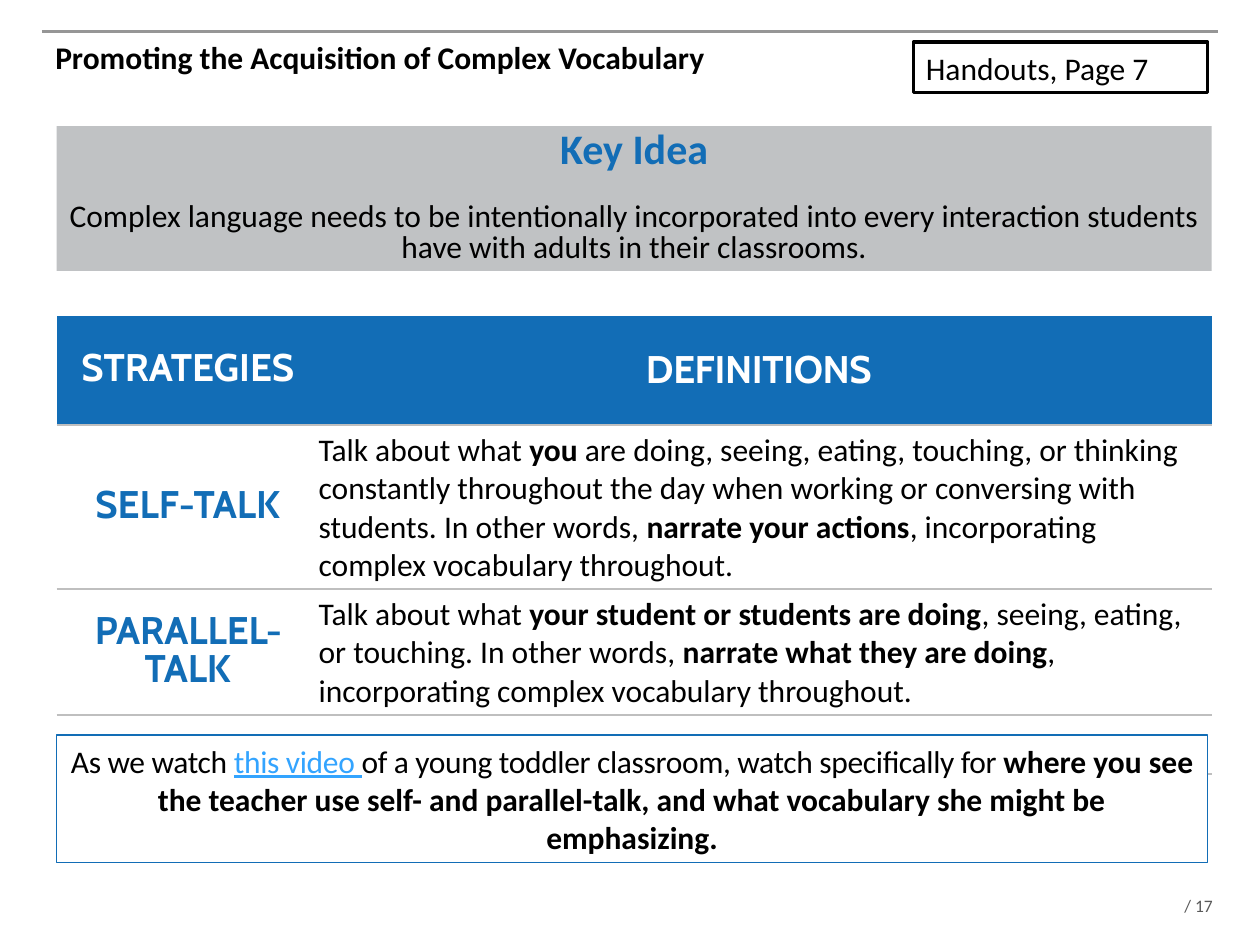
"""Build the slide on self-talk and parallel-talk strategies."""
import pptx
import pptx.dml.color
import pptx.enum.shapes
import pptx.enum.text
import pptx.oxml
import pptx.oxml.ns
import pptx.util

Pt = pptx.util.Pt
ALIGN = pptx.enum.text.PP_ALIGN
ANCHOR = pptx.enum.text.MSO_ANCHOR
BLUE, GREY, BLACK, WHITE, LINK = "126DB6", "BFBFBF", "000000", "FFFFFF", "33A4FF"

TITLE = "Promoting the Acquisition of Complex Vocabulary"
HANDOUT = "Handouts, Page 7"
PAGE = " / 17"
KEY_HEADING = "Key Idea"
KEY_TEXT = ("Complex language needs to be intentionally incorporated into every "
            "interaction students have with adults in their classrooms.")
HEADERS = ["STRATEGIES", "DEFINITIONS"]
STRATEGIES = [
    ("SELF-TALK", [
        ("Talk about what ", {}), ("you", {"bold": True}),
        (" are doing, seeing, eating, touching, or thinking constantly throughout the day "
         "when working or conversing with students. In other words, ", {}),
        ("narrate your actions", {"bold": True}),
        (", incorporating complex vocabulary throughout.", {})]),
    ("PARALLEL-TALK", [
        ("Talk about what ", {}), ("your student or students are doing", {"bold": True}),
        (", seeing, eating, or touching. In other words, ", {}),
        ("narrate what they are doing", {"bold": True}),
        (", incorporating complex vocabulary throughout.", {})]),
]
VIDEO = [
    ("As we watch ", {"tracking": -20}),
    ("this video ", {"tracking": -20, "hue": LINK, "underline": True}),
    ("of a young toddler classroom, watch specifically for ", {"tracking": -20}),
    ("where you see the teacher use self- and parallel-talk, and what vocabulary "
     "she might be emphasizing.", {"bold": True}),
]
COLUMN_WIDTHS = [142.5, 517.5]
ROW_HEIGHTS = [63, 93.6, 72, 33.6]


def color(value):
    return pptx.dml.color.RGBColor.from_string(value)


def write(paragraph, runs, size=18, hue=BLACK, name="Calibri", bold=None,
          align=ALIGN.LEFT, spacing=None):
    paragraph.alignment = align
    if spacing:
        paragraph.line_spacing = spacing
    font = paragraph.font
    font.size, font.name, font.bold = Pt(size), name, bold
    font.color.rgb = color(hue)
    for words, style in [(runs, {})] if isinstance(runs, str) else runs:
        run = paragraph.add_run()
        run.text = words
        if "bold" in style:
            run.font.bold = style["bold"]
        if "underline" in style:
            run.font.underline = style["underline"]
        if "hue" in style:
            run.font.color.rgb = color(style["hue"])
        if "tracking" in style:
            run.font._element.set("spc", str(style["tracking"]))


def add_text(slide, box, runs, inset=True, **style):
    frame = slide.shapes.add_textbox(*map(Pt, box)).text_frame
    frame.word_wrap = True
    if not inset:
        frame.margin_left = frame.margin_right = frame.margin_top = frame.margin_bottom = 0
    write(frame.paragraphs[0], runs, **style)


def add_panel(slide, box, fill, outline=None, weight=0):
    panel = slide.shapes.add_shape(pptx.enum.shapes.MSO_SHAPE.RECTANGLE, *map(Pt, box))
    panel.shadow.inherit = False
    panel.fill.solid()
    panel.fill.fore_color.rgb = color(fill)
    if outline:
        panel.line.color.rgb = color(outline)
        panel.line.width = Pt(weight)
    else:
        panel.line.fill.background()
    panel.text_frame.word_wrap = True
    return panel.text_frame


def set_borders(cell, **edges):
    properties = cell._tc.get_or_add_tcPr()
    for position, side in enumerate("LRTB"):
        hue = edges.get(side)
        paint = f'<a:solidFill><a:srgbClr val="{hue}"/></a:solidFill>' if hue else "<a:noFill/>"
        properties.insert(position, pptx.oxml.parse_xml(
            f'<a:ln{side} {pptx.oxml.ns.nsdecls("a")} w="12700">{paint}</a:ln{side}>'))


def add_strategies(slide):
    table = slide.shapes.add_table(
        len(ROW_HEIGHTS), len(COLUMN_WIDTHS), Pt(32.4), Pt(180),
        Pt(sum(COLUMN_WIDTHS)), Pt(sum(ROW_HEIGHTS))).table
    table.first_row = table.horz_banding = False
    for column, width in zip(table.columns, COLUMN_WIDTHS):
        column.width = Pt(width)
    for row, height in zip(table.rows, ROW_HEIGHTS):
        row.height = Pt(height)
    for r, row in enumerate(table.rows):
        for c, cell in enumerate(row.cells):
            cell.vertical_anchor = ANCHOR.MIDDLE
            if c == 0:
                cell.margin_right = 0
            if r == 0:
                cell.fill.solid()
                cell.fill.fore_color.rgb = color(BLUE)
            else:
                cell.fill.background()
            set_borders(cell, T=GREY if r else WHITE, B=GREY)
    label = dict(size=22, name="Cabin", bold=True, align=ALIGN.CENTER)
    strategies, definitions = (table.cell(0, c).text_frame.paragraphs[0] for c in range(2))
    write(strategies, HEADERS[0], hue=WHITE, spacing=0.8, **label)
    write(definitions, [(HEADERS[1], {"tracking": -20})], hue=WHITE, **label)
    for r, (strategy, definition) in enumerate(STRATEGIES, 1):
        write(table.cell(r, 0).text_frame.paragraphs[0], strategy, hue=BLUE, spacing=0.8, **label)
        write(table.cell(r, 1).text_frame.paragraphs[0], definition)


def main():
    deck = pptx.Presentation()
    deck.slide_width, deck.slide_height = Pt(720), Pt(540)
    slide = deck.slides.add_slide(deck.slide_layouts[6])

    add_text(slide, (674.6, 511.2, 45.4, 12.2), PAGE, inset=False, size=10, hue="595959")
    rule = slide.shapes.add_connector(
        pptx.enum.shapes.MSO_CONNECTOR.STRAIGHT, Pt(24), Pt(18), Pt(696), Pt(18))
    rule.line.color.rgb = color("969696")
    rule.line.width = Pt(2)
    rule._element.spPr.append(
        pptx.oxml.parse_xml(f'<a:effectLst {pptx.oxml.ns.nsdecls("a")}/>'))
    add_text(slide, (24.5, 18, 671, 66), TITLE, bold=True)

    handout = add_panel(slide, (522, 24, 168, 29), WHITE, BLACK, 2)
    write(handout.paragraphs[0], HANDOUT)

    add_strategies(slide)

    video = add_panel(slide, (32.4, 420, 657.6, 72.7), WHITE, BLUE, 0.75)
    write(video.paragraphs[0], VIDEO, align=ALIGN.CENTER)

    key = add_panel(slide, (32.4, 72, 660, 82.8), "C0C2C4")
    write(key.paragraphs[0], KEY_HEADING, size=24, hue=BLUE, bold=True,
          align=ALIGN.CENTER, spacing=0.8)
    idea = key.add_paragraph()
    idea.space_before = Pt(17.6)
    write(idea, KEY_TEXT, align=ALIGN.CENTER, spacing=0.8)

    deck.save("out.pptx")


if __name__ == "__main__":
    main()
